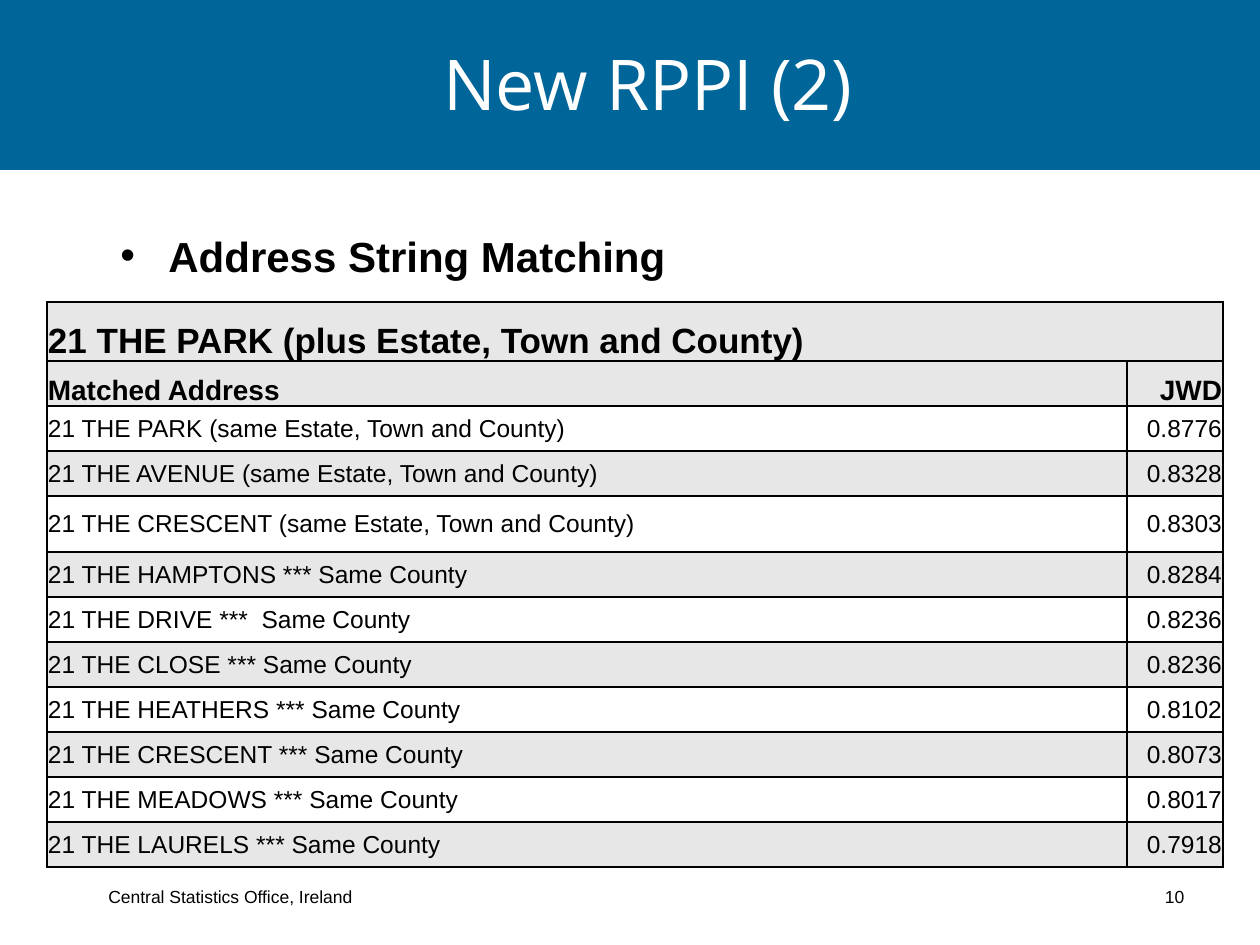
import pptx
import pptx.dml.color
import pptx.enum.shapes
import pptx.enum.text
import pptx.oxml.ns
import pptx.util
import lxml.etree

PX = 914400 // 126
COLORS = {"band": "006699", "shade": "E7E7E7", "ink": "000000", "paper": "FFFFFF"}
ALIGN = pptx.enum.text.PP_ALIGN
ANCHOR = pptx.enum.text.MSO_ANCHOR

HEADING = "21 THE PARK (plus Estate, Town and County)"
MATCHES = [
    ("21 THE PARK (same Estate, Town and County)", "0.8776"),
    ("21 THE AVENUE (same Estate, Town and County)", "0.8328"),
    ("21 THE CRESCENT (same Estate, Town and County)", "0.8303"),
    ("21 THE HAMPTONS *** Same County", "0.8284"),
    ("21 THE DRIVE ***  Same County", "0.8236"),
    ("21 THE CLOSE *** Same County", "0.8236"),
    ("21 THE HEATHERS *** Same County", "0.8102"),
    ("21 THE CRESCENT *** Same County", "0.8073"),
    ("21 THE MEADOWS *** Same County", "0.8017"),
    ("21 THE LAURELS *** Same County", "0.7918"),
]


def px(*lengths):
    return [pptx.util.Emu(length * PX) for length in lengths]


def rgb(name):
    return pptx.dml.color.RGBColor.from_string(COLORS[name])


def child(parent, tag, **attributes):
    return lxml.etree.SubElement(parent, pptx.oxml.ns.qn(tag), attributes)


def write(paragraph, text, size, color="ink", bold=False, font="Arial"):
    run = paragraph.add_run()
    run.text = text
    run.font.size = pptx.util.Pt(size)
    run.font.name = font
    run.font.bold = bold
    run.font.color.rgb = rgb(color)


def add_header(slide, left, top, width, height):
    band = slide.shapes.add_shape(
        pptx.enum.shapes.MSO_SHAPE.RECTANGLE, *px(left, top, width, height))
    band.shadow.inherit = False
    band.fill.solid()
    band.fill.fore_color.rgb = rgb("band")
    band.line.fill.background()
    slide.shapes._spTree.insert(2, band._element)

    title = slide.shapes.title
    title.left, title.top, title.width, title.height = px(
        left + 304, top + 4, 688, height - 13)
    title.fill.solid()
    title.fill.fore_color.rgb = rgb("band")
    frame = title.text_frame
    frame.auto_size = pptx.enum.text.MSO_AUTO_SIZE.NONE
    frame.vertical_anchor = ANCHOR.MIDDLE
    frame.paragraphs[0].alignment = ALIGN.CENTER
    write(frame.paragraphs[0], "New RPPI (2)", 40, "paper", font="Open Sans")


def add_topic(slide, left, top, width, height):
    frame = slide.shapes.add_textbox(*px(left, top, width, height)).text_frame
    frame.word_wrap = True
    paragraph = frame.paragraphs[0]
    properties = paragraph._p.get_or_add_pPr()
    indent = 48 * PX
    properties.set("marL", str(indent))
    properties.set("indent", str(-indent))
    child(child(properties, "a:buClr"), "a:srgbClr", val=COLORS["ink"])
    child(properties, "a:buFont", typeface="Arial")
    child(properties, "a:buChar", char="•")
    write(paragraph, "Address String Matching", 24, bold=True)


def add_borders(cell):
    properties = cell._tc.get_or_add_tcPr()
    for position, side in enumerate(("a:lnL", "a:lnR", "a:lnT", "a:lnB")):
        line = child(properties, side, w="12700")
        child(child(line, "a:solidFill"), "a:srgbClr", val=COLORS["ink"])
        properties.insert(position, line)


def fill_cell(cell, text, size, align, header, shaded):
    cell.margin_left, cell.margin_right, cell.margin_top, cell.margin_bottom = px(1, 1, 1, 0)
    cell.vertical_anchor = ANCHOR.BOTTOM if header else ANCHOR.MIDDLE
    if shaded:
        cell.fill.solid()
        cell.fill.fore_color.rgb = rgb("shade")
    else:
        cell.fill.background()
    add_borders(cell)
    paragraph = cell.text_frame.paragraphs[0]
    paragraph.alignment = align
    if text:
        write(paragraph, text, size, bold=header)


def add_matches(slide, left, top, width, height):
    rows = [(HEADING, ""), ("Matched Address", "JWD")] + MATCHES
    table = slide.shapes.add_table(len(rows), 2, *px(left, top, width, height)).table
    table.first_row = table.horz_banding = False
    score_width = 96
    table.columns[0].width, table.columns[1].width = px(width - score_width, score_width)
    tall_rows = {0: 59, 4: 56}
    plain_height = (height - sum(tall_rows.values())) // (len(rows) - len(tall_rows))
    table.cell(0, 0).merge(table.cell(0, 1))
    for number, texts in enumerate(rows):
        table.rows[number].height = px(tall_rows.get(number, plain_height))[0]
        header = number < 2
        size = (20, 16)[number] if header else 14
        shaded = header or number % 2 == 1
        for column, align in enumerate((ALIGN.LEFT, ALIGN.RIGHT)):
            fill_cell(table.cell(number, column), texts[column], size, align, header, shaded)


def add_footer(slide, left, top, width, height):
    frame = slide.shapes.add_textbox(*px(left, top, width, height)).text_frame
    frame.word_wrap = True
    frame.vertical_anchor = ANCHOR.BOTTOM
    paragraph = frame.paragraphs[0]
    tabs = child(paragraph._p.get_or_add_pPr(), "a:tabLst")
    child(tabs, "a:tab", pos=str((width - 39) * PX), algn="r")
    paragraph.line_spacing = 0.8
    write(paragraph, "Central Statistics Office, Ireland\t10", 10)


def main():
    deck = pptx.Presentation()
    deck.slide_width, deck.slide_height = px(1260, 945)
    slide = deck.slides.add_slide(deck.slide_layouts[5])
    add_header(slide, 0, 0, 1260, 170)
    add_topic(slide, 108, 224, 1108, 604)
    add_footer(slide, 96, 874, 1115, 39)
    add_matches(slide, 47, 302, 1176, 565)
    deck.save("out.pptx")


if __name__ == "__main__":
    main()
